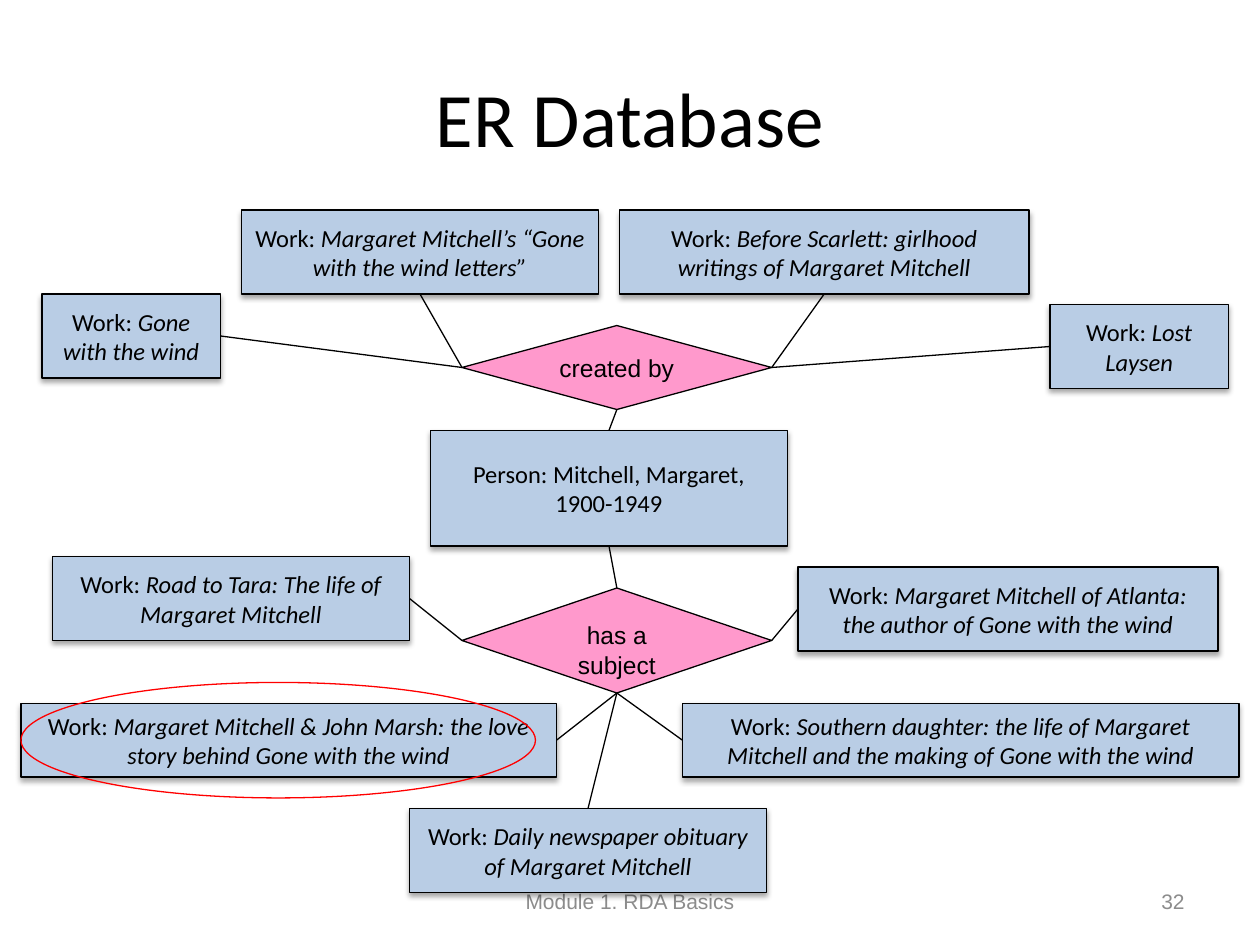
from lxml.etree import SubElement
from pptx import Presentation
from pptx.dml.color import RGBColor
from pptx.enum.shapes import MSO_CONNECTOR, MSO_SHAPE
from pptx.enum.text import MSO_ANCHOR, PP_ALIGN
from pptx.oxml.ns import qn
from pptx.util import Pt

BLACK = RGBColor(0x00, 0x00, 0x00)
BLUE = RGBColor(0xB9, 0xCD, 0xE5)
PINK = RGBColor(0xFF, 0x99, 0xCC)
RED = RGBColor(0xFF, 0x00, 0x00)
GRAY = RGBColor(0x8C, 0x8C, 0x8C)


def write(shape, text, lead="", size=14, font="Calibri", color=BLACK,
          align=PP_ALIGN.CENTER, anchor=MSO_ANCHOR.MIDDLE):
    frame = shape.text_frame
    frame.word_wrap = True
    frame.vertical_anchor = anchor
    para = frame.paragraphs[0]
    para.alignment = align
    for part in filter(None, (lead, text)):
        run = para.add_run()
        run.text = part
        run.font.name = font
        run.font.size = Pt(size)
        run.font.color.rgb = color
        run.font.italic = bool(lead) and part == text


def draw(kind, place, fill=None, line=BLACK):
    shape = shapes.add_shape(kind, *map(Pt, place))
    if fill is None:
        shape.fill.background()
    else:
        shape.fill.solid()
        shape.fill.fore_color.rgb = fill
    shape.line.color.rgb = line
    shape.line.width = Pt(0.75)
    shape.shadow.inherit = False
    return shape


deck = Presentation()
deck.slide_width, deck.slide_height = Pt(720), Pt(540)
slide = deck.slides.add_slide(deck.slide_layouts[5])
shapes = slide.shapes

title = shapes.title
title.left, title.top, title.width, title.height = map(Pt, (36, 21.6, 648, 90))
write(title, "ER Database", size=44)

foot = shapes.add_textbox(*map(Pt, (246, 500.5, 228, 28.8)))
write(foot, "Module 1. RDA Basics", size=12, font="Arial", color=GRAY)
page = shapes.add_textbox(*map(Pt, (516, 500.5, 168, 28.8)))
write(page, "32", size=12, font="Arial", color=GRAY, align=PP_ALIGN.RIGHT)

work = "Work: "
boxes = [
    ("gone", (24, 168, 102, 48), work, "Gone with the wind"),
    ("person", (246, 246, 204, 66), "", "Person: Mitchell, Margaret, 1900-1949"),
    ("letters", (138, 120, 204, 48), work,
     "Margaret Mitchell’s “Gone with the wind letters”"),
    ("lost", (600, 174, 102, 48), work, "Lost Laysen"),
    ("girlhood", (354, 120, 234, 48), work,
     "Before Scarlett: girlhood writings of Margaret Mitchell"),
    ("road", (30, 318, 204, 48), work,
     "Road to Tara: The life of Margaret Mitchell"),
    ("obit", (234, 462, 204, 48), work,
     "Daily newspaper obituary of Margaret Mitchell"),
    ("marsh", (12, 402, 306, 42), work,
     "Margaret Mitchell & John Marsh: the love story behind Gone with the wind"),
    ("daughter", (390, 402, 318, 42), work,
     "Southern daughter: the life of Margaret Mitchell and the making of "
     "Gone with the wind"),
    ("author", (456, 324, 240, 48), work,
     "Margaret Mitchell of Atlanta: the author of Gone with the wind"),
]
nodes = {}
for name, place, lead, text in boxes:
    node = nodes[name] = draw(MSO_SHAPE.FLOWCHART_PROCESS, place, BLUE)
    write(node, text, lead=lead)
    effects = node.element.spPr.find(qn("a:effectLst"))
    shadow = SubElement(effects, qn("a:outerShdw"), blurRad=str(Pt(3.1)),
                        dist=str(Pt(1.8)), dir="5400000", rotWithShape="0")
    tint = SubElement(shadow, qn("a:srgbClr"), val="000000")
    SubElement(tint, qn("a:alpha"), val="35000")

for name, top, height, text in [("created", 186, 48, "created by"),
                                ("subject", 336, 60, "has a subject")]:
    node = nodes[name] = draw(MSO_SHAPE.FLOWCHART_DECISION,
                              (264, top, 177, height), PINK)
    write(node, text, font="Arial", anchor=MSO_ANCHOR.TOP)

TOP, LEFT, BOTTOM, RIGHT = range(4)
links = [
    ("gone", RIGHT, "created", LEFT),
    ("letters", BOTTOM, "created", LEFT),
    ("created", RIGHT, "girlhood", BOTTOM),
    ("lost", LEFT, "created", RIGHT),
    ("person", TOP, "created", BOTTOM),
    ("subject", TOP, "person", BOTTOM),
    ("subject", RIGHT, "author", LEFT),
    ("subject", BOTTOM, "daughter", LEFT),
    ("subject", BOTTOM, "obit", TOP),
    ("subject", BOTTOM, "marsh", RIGHT),
    ("road", RIGHT, "subject", LEFT),
]
for start, exit, end, entry in links:
    link = shapes.add_connector(MSO_CONNECTOR.STRAIGHT, 0, 0, 0, 0)
    link.begin_connect(nodes[start], exit)
    link.end_connect(nodes[end], entry)
    link.line.color.rgb = BLACK
    link.line.width = Pt(0.75)
    SubElement(link.element.spPr, qn("a:effectLst"))

draw(MSO_SHAPE.OVAL, (12, 390, 294, 66), line=RED)

deck.save("out.pptx")
